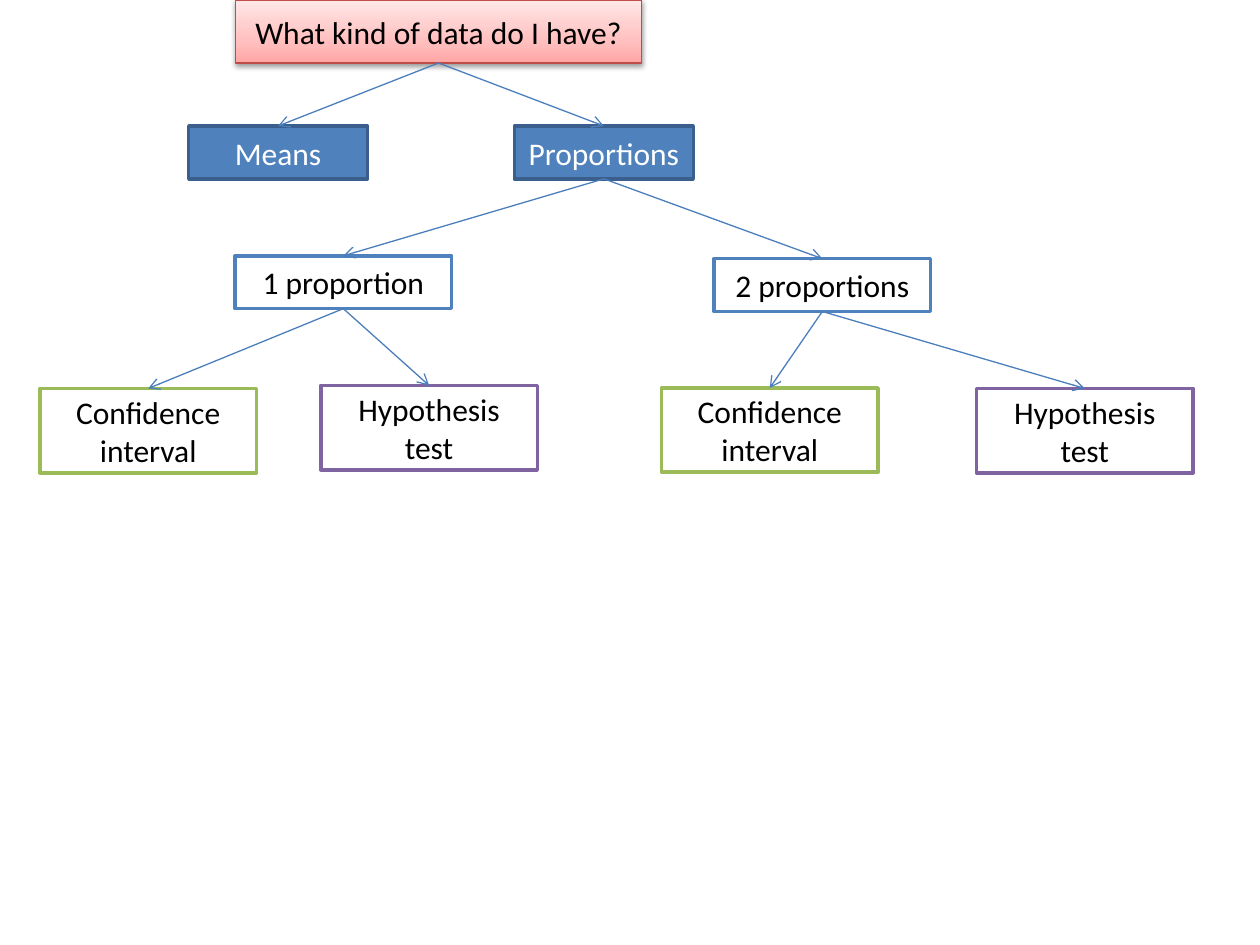
from copy import deepcopy

from pptx import Presentation
from pptx.dml.color import RGBColor
from pptx.enum.shapes import MSO_CONNECTOR, MSO_SHAPE
from pptx.enum.text import MSO_ANCHOR, PP_ALIGN
from pptx.oxml.ns import qn
from pptx.oxml.xmlchemy import OxmlElement
from pptx.util import Pt

RECTANGLE = MSO_SHAPE.RECTANGLE
STRAIGHT = MSO_CONNECTOR.STRAIGHT
MIDDLE = MSO_ANCHOR.MIDDLE
CENTER = PP_ALIGN.CENTER
TOP_SITE, BOTTOM_SITE = 0, 2

ARROW_COLOUR = "4B7EBC"
QUESTION_STOPS = [(0, "FFA6A5"), (0.35, "FFC0BF"), (1, "FFE7E7")]

# Size, colours and line width for each kind of box
STYLES = {
    "question": dict(size=(231.8, 36), fill=None, line="BF4C48", weight=0.75, text="000000"),
    "data": dict(size=(102.2, 30.2), fill="4F81BD", line="3A5F8C", weight=2, text="FFFFFF"),
    "count": dict(size=(123.8, 30.2), fill="FFFFFF", line="4F81BD", weight=2, text="000000"),
    "interval": dict(size=(123.8, 48.2), fill="FFFFFF", line="9BBB59", weight=2, text="000000"),
    "test": dict(size=(123.8, 48.2), fill="FFFFFF", line="8064A2", weight=2, text="000000"),
}

# Key: style, wording, left, top, parent key
NODES = {
    "root": ("question", "What kind of data do I have?", 134.7, 0, None),
    "means": ("data", "Means", 107.8, 72, "root"),
    "proportions": ("data", "Proportions", 294, 72, "root"),
    "one": ("count", "1 proportion", 134.3, 146.2, "proportions"),
    "two": ("count", "2 proportions", 408, 147.8, "proportions"),
    "one interval": ("interval", "Confidence interval", 22.8, 222, "one"),
    "one test": ("test", "Hypothesis test", 183.3, 220.3, "one"),
    "two interval": ("interval", "Confidence interval", 378, 221.7, "two"),
    "two test": ("test", "Hypothesis test", 558, 222, "two"),
}


def colour(hex_code):
    return RGBColor.from_string(hex_code)


def add_element(parent, tag, **attributes):
    element = OxmlElement(tag)
    for name, value in attributes.items():
        element.set(name, str(value))
    parent.append(element)
    return element


def add_box(page, style, wording, left, top):
    width, height = style["size"]
    box = page.shapes.add_shape(RECTANGLE, Pt(left), Pt(top), Pt(width), Pt(height))
    box.shadow.inherit = False
    if style["fill"]:
        box.fill.solid()
        box.fill.fore_color.rgb = colour(style["fill"])
    box.line.color.rgb = colour(style["line"])
    box.line.width = Pt(style["weight"])

    frame = box.text_frame
    frame.word_wrap = True
    frame.vertical_anchor = MIDDLE
    para = frame.paragraphs[0]
    para.alignment = CENTER
    span = para.add_run()
    span.text = wording
    font_format = {"name": "Calibri", "size": Pt(18)}
    for name, value in font_format.items():
        setattr(span.font, name, value)
    span.font.color.rgb = colour(style["text"])
    return box


def add_gradient(box, stops):
    box.fill.gradient()
    box.fill.gradient_angle = 90
    # The default gradient has two stops; extend it to the number needed
    stop_list = box.fill._xPr.find(qn("a:gradFill")).find(qn("a:gsLst"))
    while len(stop_list) < len(stops):
        stop_list.append(deepcopy(stop_list[0]))
    for stop, (position, hex_code) in zip(box.fill.gradient_stops, stops):
        stop.position = position
        stop.color.rgb = colour(hex_code)


def add_shadow(box):
    effects = box._element.spPr.find(qn("a:effectLst"))
    shadow = add_element(effects, "a:outerShdw", blurRad=Pt(3.1), dist=Pt(1.6),
                         dir=90 * 60000, rotWithShape=0)
    shade = add_element(shadow, "a:srgbClr", val="000000")
    add_element(shade, "a:alpha", val=38000)


def add_arrow(page, parent, child):
    arrow = page.shapes.add_connector(STRAIGHT, 0, 0, 0, 0)
    arrow.begin_connect(parent, BOTTOM_SITE)
    arrow.end_connect(child, TOP_SITE)
    arrow.line.color.rgb = colour(ARROW_COLOUR)
    arrow.line.width = Pt(0.75)
    add_element(arrow.line._get_or_add_ln(), "a:tailEnd", type="arrow")
    add_element(arrow._element.spPr, "a:effectLst")


def main():
    deck = Presentation()
    deck.slide_width, deck.slide_height = Pt(720), Pt(540)
    page = deck.slides.add_slide(deck.slide_layouts[6])

    # Boxes of the decision tree
    boxes = {}
    for key, (kind, wording, left, top, _) in NODES.items():
        boxes[key] = add_box(page, STYLES[kind], wording, left, top)
    add_gradient(boxes["root"], QUESTION_STOPS)
    add_shadow(boxes["root"])

    # Arrows from each box to its choices
    for key, node in NODES.items():
        parent = node[-1]
        if parent:
            add_arrow(page, boxes[parent], boxes[key])

    deck.save("out.pptx")


if __name__ == "__main__":
    main()
